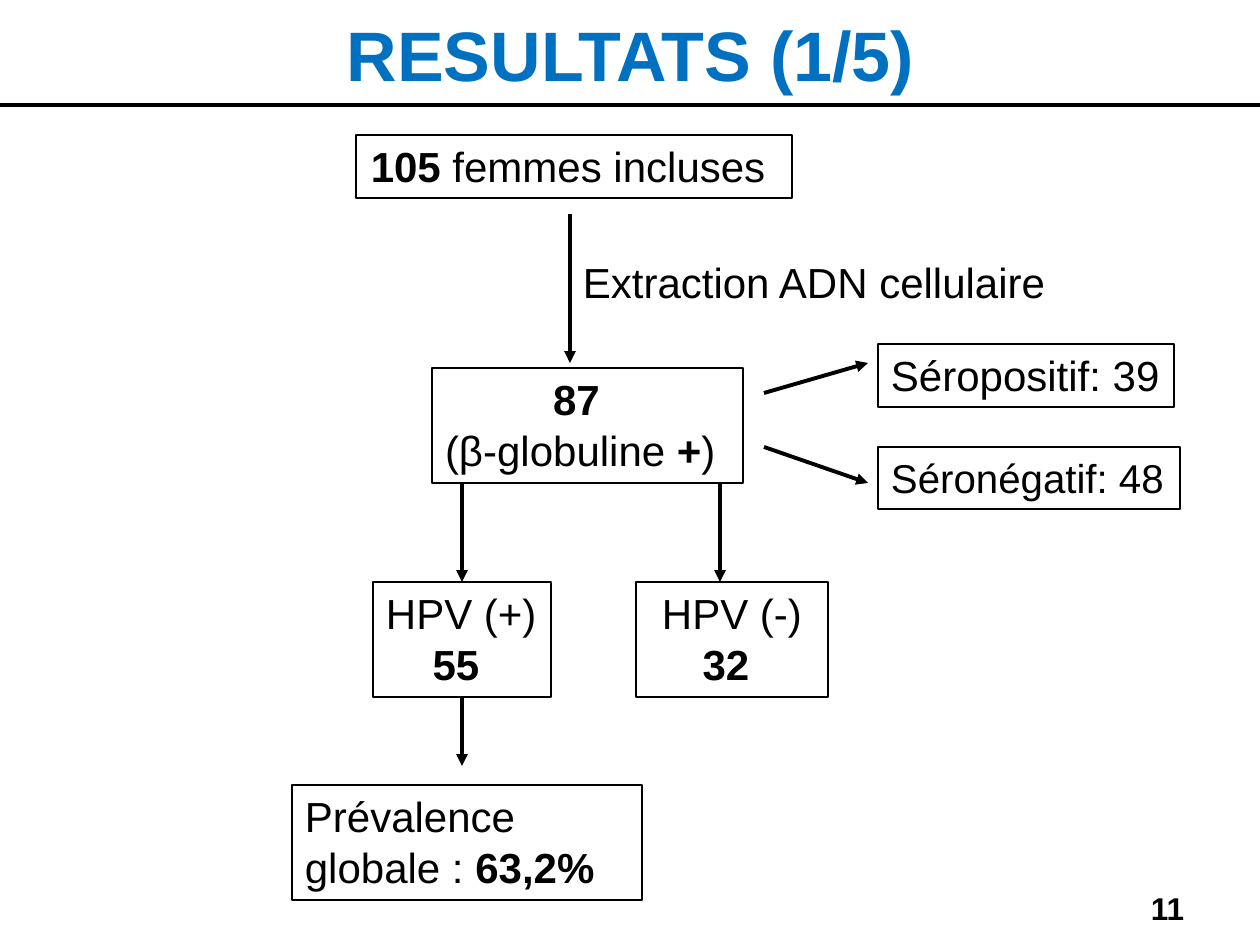
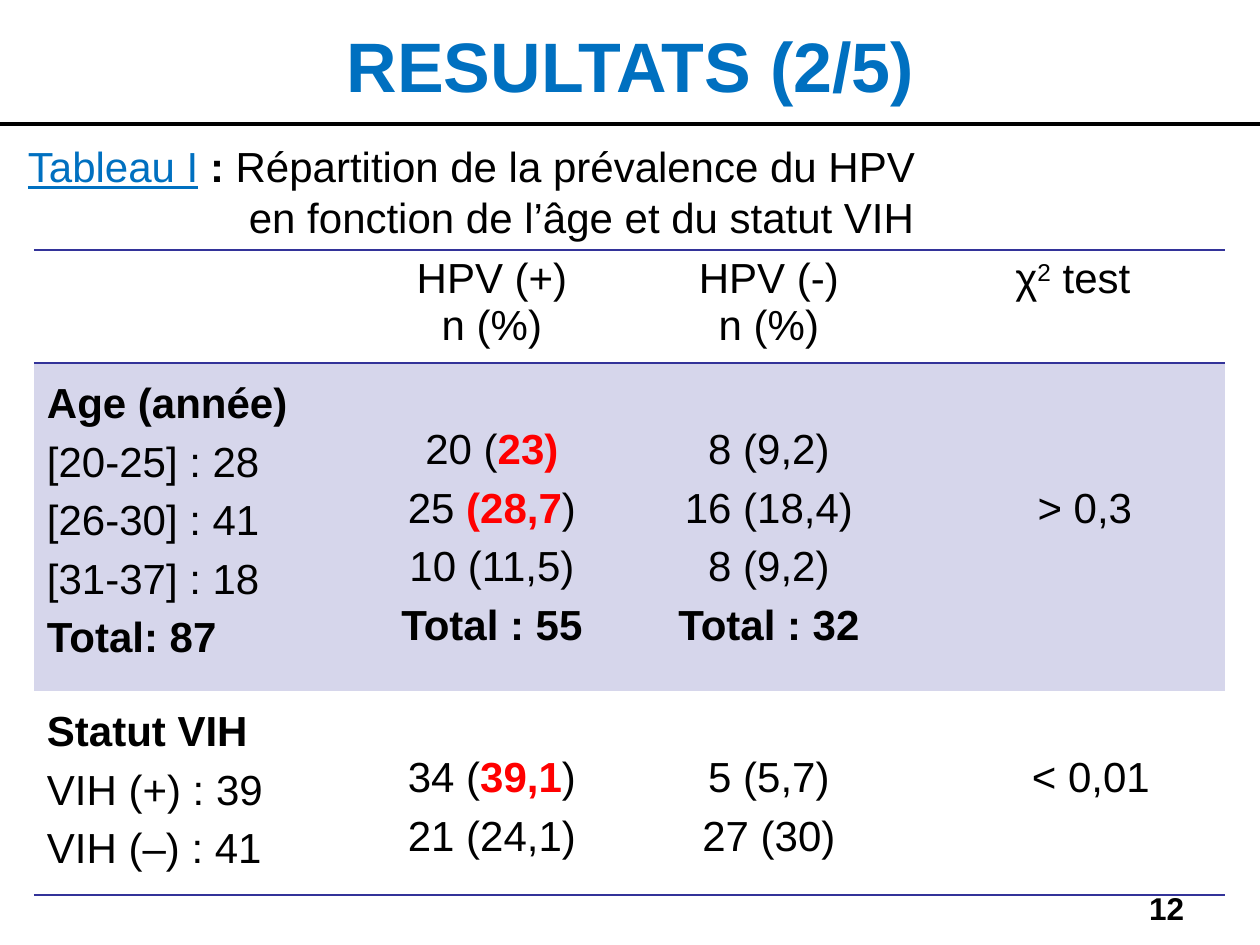
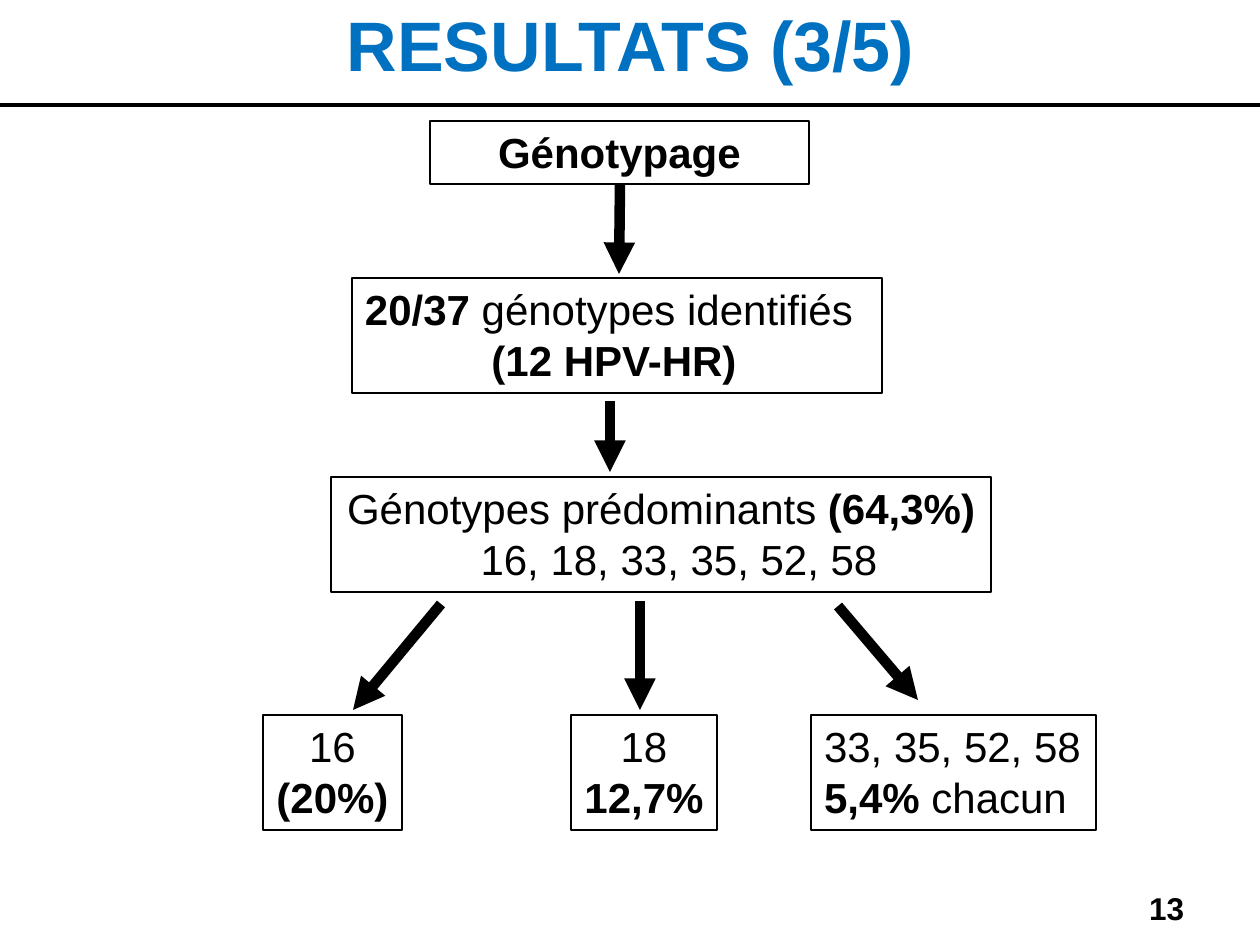
from lxml.etree import SubElement as Sub
from pptx import Presentation
from pptx.dml.color import RGBColor as Rgb
from pptx.enum.shapes import MSO_CONNECTOR as Link, MSO_SHAPE as Shape
from pptx.enum.text import MSO_ANCHOR as Anchor, PP_ALIGN as Align
from pptx.oxml.ns import qn
from pptx.util import Pt

PX = 914400 / 126
WIDE, HIGH = 1260, 945
FONT = "Arial"
COLS = {"ink": "000000", "title": "0070C0", "hot": "FF0000",
        "rule": "333399", "band": "D6D6EB"}
SIDES = {"l": Align.LEFT, "c": Align.CENTER, "r": Align.RIGHT}
# Each mark opens and closes a run style
MARKS = {"*": {"bold": True}, "~": {"bold": True, "col": "hot"},
         "_": {"under": True, "col": "title"}, "^": {"base": 30000}}
PLAIN = "{2D5ABB26-0587-4C30-8999-92F81FD0307C}"


def emu(*vals):
    return [round(v * PX) for v in vals]


def tint(name):
    return Rgb.from_string(COLS[name])


def split(line):
    """Yield (text, style) for each marked part of a line."""
    part, mark = "", ""
    for char in line:
        if char in MARKS:
            if part:
                yield part, MARKS.get(mark, {})
            part, mark = "", "" if mark else char
        else:
            part += char
    if part:
        yield part, MARKS.get(mark, {})


def write(frame, text, size=24, col="ink", bold=False, side="l", pads=(),
          gap=None):
    """Fill a frame; side has a letter per line, pads an indent (< 0: right)."""
    frame.word_wrap = True
    for i, line in enumerate(text.split("\n")):
        para = frame.paragraphs[0] if i == 0 else frame.add_paragraph()
        para.alignment = SIDES[side[min(i, len(side) - 1)]]
        if gap:
            para.line_spacing = gap
        pad = pads[i] if i < len(pads) else 0
        left, right = emu(max(pad, 0), max(-pad, 0))
        props = para._p.get_or_add_pPr()
        for name, val in (("marL", left), ("marR", right), ("indent", 0)):
            props.set(name, str(val))
        for part, look in split(line):
            run = para.add_run()
            run.text = part
            font = run.font
            font.name, font.size = FONT, Pt(size)
            font.bold = look.get("bold", bold)
            font.underline = look.get("under", False)
            font.color.rgb = tint(look.get("col", col))
            if "base" in look:
                run._r.get_or_add_rPr().set("baseline", str(look["base"]))


def inset(item, top=6):
    (item.margin_left, item.margin_top,
     item.margin_right, item.margin_bottom) = emu(13, top, 13, 6)


def edge(cell, side, shown):
    """Set one border of a cell, side being T or B."""
    props = cell._tc.get_or_add_tcPr()
    line = props.makeelement(qn(f"a:ln{side}"), {"w": str(Pt(1))})
    if shown:
        fill = Sub(line, qn("a:solidFill"))
        Sub(fill, qn("a:srgbClr"), val=COLS["rule"])
    else:
        Sub(line, qn("a:noFill"))
    props.insert(0, line)


class Deck:
    def __init__(self):
        self.prs = Presentation()
        self.prs.slide_width, self.prs.slide_height = emu(WIDE, HIGH)

    def page(self, title, num, top, rule):
        self.slide = self.prs.slides.add_slide(self.prs.slide_layouts[5])
        self.shapes = self.slide.shapes
        head = self.shapes.title
        head.left, head.top, head.width, head.height = emu(54, top, 1153, 97)
        frame = head.text_frame
        inset(frame)
        frame.vertical_anchor = Anchor.TOP
        write(frame, title, size=40, col="title", bold=True, side="c")
        self.line(0, rule, WIDE, rule)
        self.text(903, 883, 294, 66, str(num), size=18, bold=True, side="r")

    def text(self, x, y, w, h, text, **form):
        box = self.shapes.add_textbox(*emu(x, y, w, h))
        inset(box.text_frame)
        write(box.text_frame, text, **form)

    def box(self, x, y, w, h, text, **form):
        box = self.shapes.add_shape(Shape.RECTANGLE, *emu(x, y, w, h))
        box.shadow.inherit = False
        box.fill.background()
        box.line.color.rgb, box.line.width = tint("ink"), Pt(1.5)
        inset(box.text_frame)
        box.text_frame.vertical_anchor = Anchor.TOP
        write(box.text_frame, text, **form)

    def line(self, x1, y1, x2, y2, thick=2.25, head=False):
        line = self.shapes.add_connector(Link.STRAIGHT, *emu(x1, y1, x2, y2))
        line.line.color.rgb, line.line.width = tint("ink"), Pt(thick)
        if head:
            Sub(line.line._get_or_add_ln(), qn("a:tailEnd"), type="triangle")
        Sub(line._element.spPr, qn("a:effectLst"))

    def arrow(self, *ends, thick=2.25):
        self.line(*ends, thick=thick, head=True)

    def table(self, x, y, cols, rows):
        frame = self.shapes.add_table(
            len(rows), len(cols), *emu(x, y, sum(cols), sum(rows)))
        table = frame.table
        table.first_row = table.horz_banding = False
        table._tbl.tblPr.find(qn("a:tableStyleId")).text = PLAIN
        for col, wide in zip(table.columns, emu(*cols)):
            col.width = wide
        for row, high in zip(table.rows, emu(*rows)):
            row.height = high
        return table


def cohort(deck):
    deck.page("RESULTATS (1/5)", 11, 6, 105)
    deck.box(356, 135, 436, 63, "*105* femmes incluses", side="c", pads=[-12])
    deck.text(570, 251, 493, 63, "Extraction ADN cellulaire")
    deck.box(432, 368, 311, 115, "*87*\n(β-globuline *+*)", pads=[108])
    deck.box(878, 344, 296, 63, "Séropositif: 39")
    deck.box(878, 447, 302, 62, "Séronégatif: 48", size=23)
    deck.box(373, 582, 178, 115, "HPV (+)\n*55*", side="lc", pads=[0, -12])
    deck.box(636, 582, 192, 115, "HPV (-)\n*32*", side="c", pads=[0, -12])
    deck.box(292, 785, 350, 115, "Prévalence\nglobale : *63,2%*")
    for ends in ((570, 214, 570, 363), (462, 484, 462, 582),
                 (720, 484, 720, 582), (462, 697, 462, 766),
                 (764, 393, 868, 363), (764, 447, 868, 483)):
        deck.arrow(*ends)


def spread(deck):
    deck.page("RESULTATS (2/5)", 12, 16, 124)
    deck.text(15, 135, 931, 115,
              "_Tableau I_ *:* Répartition de la prévalence du HPV\n"
              "en fonction de l’âge et du statut VIH", pads=[0, 221])
    grid = [
        ["", "HPV (+)\nn (%)", "HPV (-)\nn (%)", "χ^2^ test"],
        ["*Age (année)*\n[20-25] : 28\n[26-30] : 41\n[31-37] : 18\n*Total: 87*",
         "20 (~23)~\n25 ~(28,7~)\n10 (11,5)\n*Total : 55*",
         "8 (9,2)\n16 (18,4)\n8 (9,2)\n*Total : 32*", "> 0,3"],
        ["*Statut VIH*\nVIH (+) : 39\nVIH (–) : 41",
         "34 (~39,1~)\n21 (24,1)", "5 (5,7)\n27 (30)", "< 0,01"],
    ]
    tops = [[6, 6, 6, 6], [6, 52, 52, 111], [6, 52, 52, 52]]
    shift = {(1, 3): 24, (2, 3): 36}
    table = deck.table(34, 250, [333, 250, 304, 304], [113, 328, 204])
    for r, row in enumerate(grid):
        for c, text in enumerate(row):
            cell = table.cell(r, c)
            inset(cell, tops[r][c])
            write(cell.text_frame, text, side="c" if c else "l",
                  pads=[shift.get((r, c), 0)], gap=1.25 if r else None)
            if r == 1:
                cell.fill.solid()
                cell.fill.fore_color.rgb = tint("band")
            else:
                cell.fill.background()
            edge(cell, "B", r != 1)
            edge(cell, "T", r != 2)


def types(deck):
    deck.page("RESULTATS (3/5)", 13, -4, 105)
    deck.box(430, 121, 379, 63, "Génotypage", bold=True, side="c")
    deck.box(352, 278, 530, 115,
             "*20/37* génotypes identifiés\n*(12 HPV-HR)*", side="lc",
             pads=[0, -6])
    deck.box(331, 477, 660, 115,
             "Génotypes prédominants *(64,3%)*\n16, 18, 33, 35, 52, 58",
             side="c", pads=[0, 36])
    for x, w, text, side in ((263, 139, "16\n*(20%)*", "c"),
                             (571, 146, "18\n*12,7%*", "c"),
                             (811, 285, "33, 35, 52, 58\n*5,4%* chacun", "l")):
        deck.box(x, 715, w, 115, text, side=side)
    for ends in ((620, 185, 619, 274), (610, 401, 610, 472),
                 (441, 604, 353, 710), (640, 601, 640, 710),
                 (838, 606, 918, 700)):
        deck.arrow(*ends, thick=6)


def main():
    deck = Deck()
    for build in (cohort, spread, types):
        build(deck)
    deck.prs.save("out.pptx")


if __name__ == "__main__":
    main()
